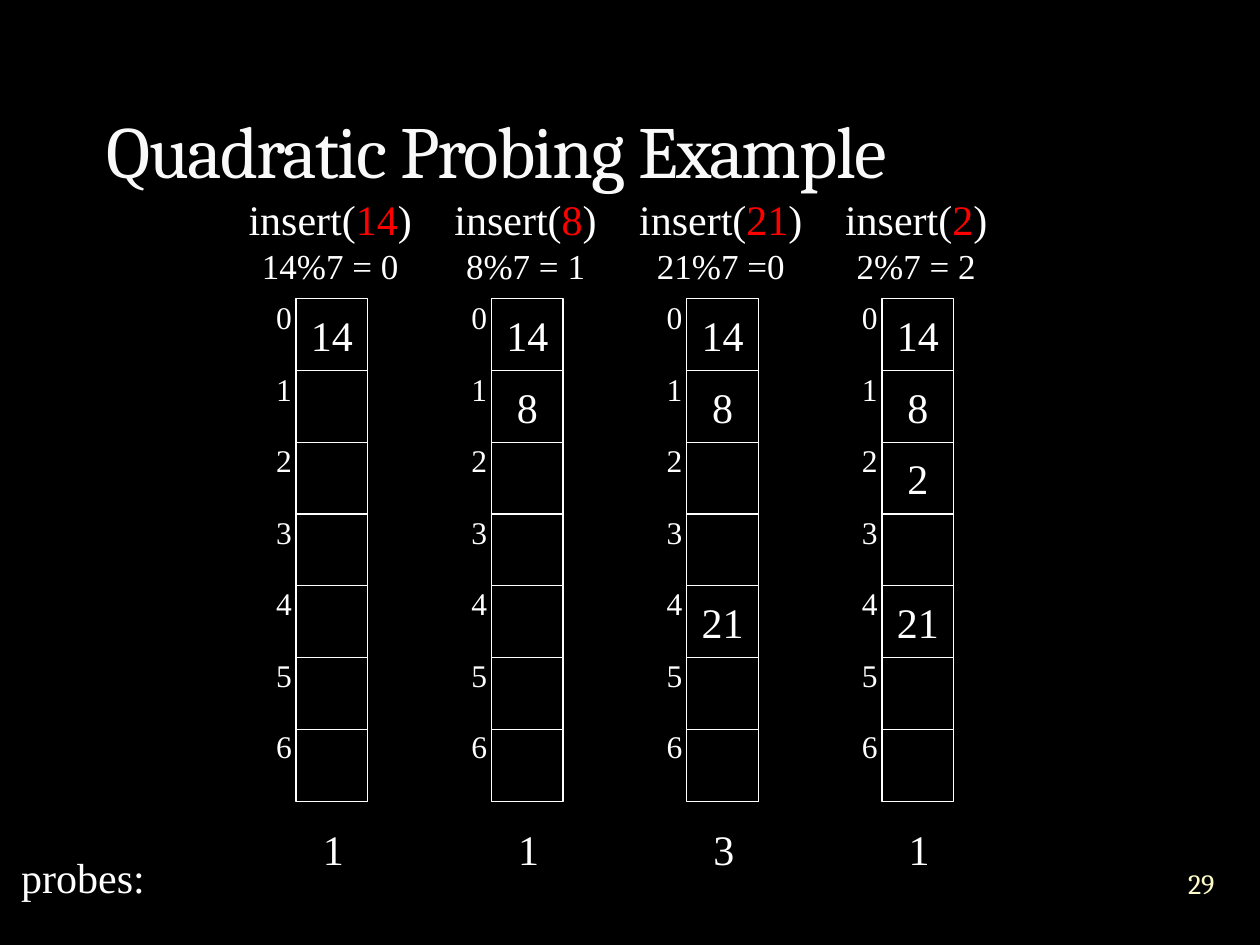
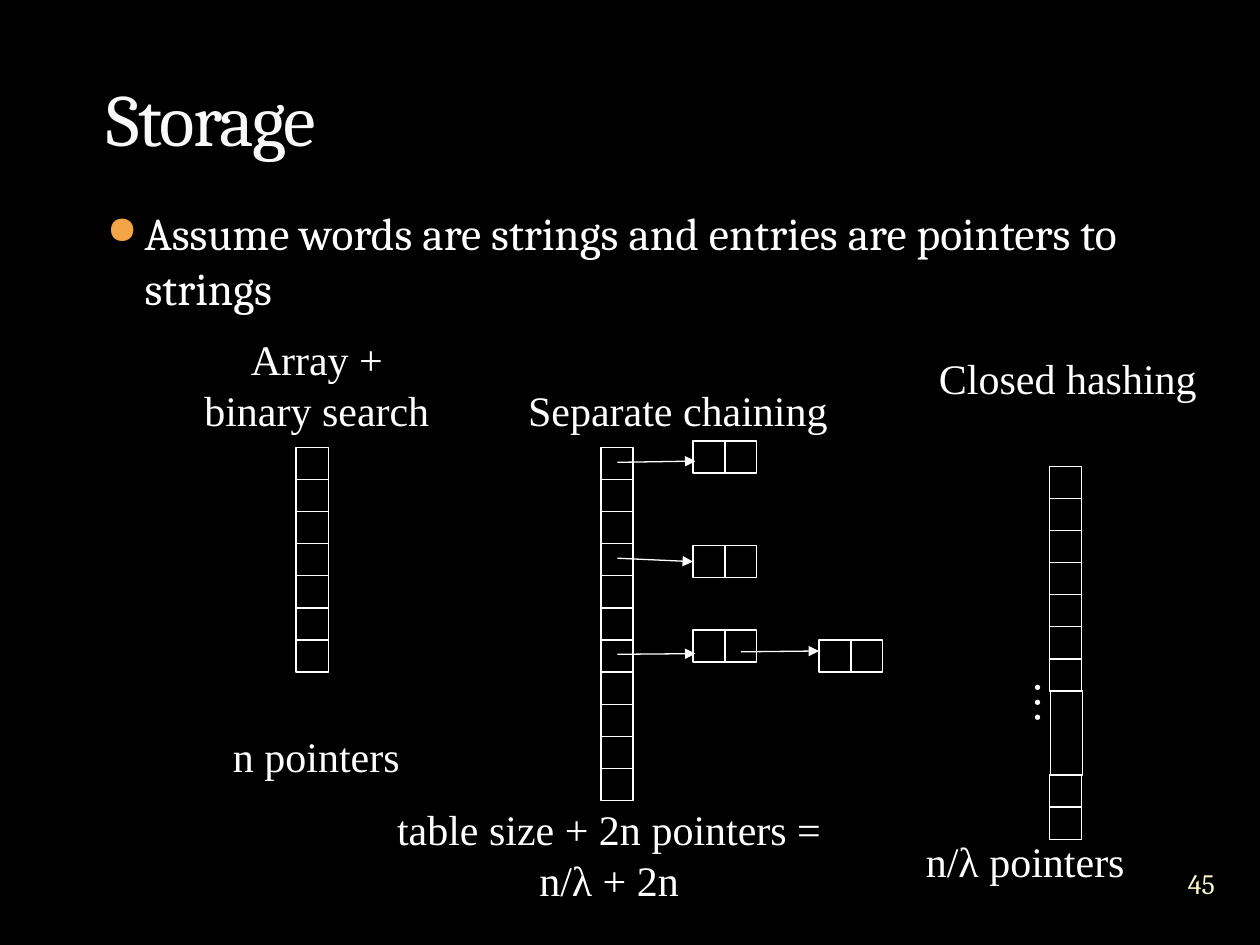
from lxml.etree import SubElement as sub
from pptx import Presentation
from pptx.dml.color import RGBColor
from pptx.enum.shapes import MSO_CONNECTOR as CONN, MSO_SHAPE as SHAPE
from pptx.enum.text import MSO_ANCHOR as ANCHOR, MSO_AUTO_SIZE as AUTO, PP_ALIGN as ALIGN
from pptx.oxml.ns import qn
from pptx.util import Pt

WHITE, BLACK, RED = "FFFFFF", "000000", "FF0000"
PALE, CREAM, AMBER, OLIVE = "F9F9F9", "FEFAC9", "F3A447", "3C4422"
SERIF, TIMES = "Cambria", "Times New Roman"
SLOT, CELL, NODE = 41.04, 18.36, 18


def tint(code):
    return RGBColor.from_string(code)


def write(para, text, size=24, color=WHITE, face=TIMES):
    run = para.add_run()
    run.text = text
    font = run.font
    font.size, font.name = Pt(size), face
    font.color.rgb = tint(color)
    return run


def add_box(shapes, left, top, width, height, wrap=False, anchor=ANCHOR.TOP, grow=False):
    frame = shapes.add_textbox(Pt(left), Pt(top), Pt(width), Pt(height)).text_frame
    frame.word_wrap = wrap
    frame.vertical_anchor = anchor
    frame.auto_size = AUTO.SHAPE_TO_FIT_TEXT if grow else AUTO.NONE
    return frame


def add_label(shapes, left, top, width, height, lines, size=24, align=ALIGN.LEFT, wrap=False):
    frame = add_box(shapes, left, top, width, height, wrap, grow=True)
    for i, line in enumerate(lines):
        para = frame.add_paragraph() if i else frame.paragraphs[0]
        para.alignment = align
        write(para, line, size)


def add_cell(shapes, left, top, width, height, text="", size=24):
    cell = shapes.add_shape(SHAPE.RECTANGLE, Pt(left), Pt(top), Pt(width), Pt(height))
    cell.shadow.inherit = False
    cell.fill.background()
    cell.line.color.rgb = tint(WHITE)
    cell.line.width = Pt(0.75)
    if text:
        frame = cell.text_frame
        frame.word_wrap = False
        frame.vertical_anchor = ANCHOR.MIDDLE
        para = frame.paragraphs[0]
        para.alignment = ALIGN.CENTER
        write(para, text, size)
    return cell


def add_stack(shapes, left, top, count, side=CELL, held={}):
    for i in range(count):
        add_cell(shapes, left, top + i * side, side, side, held.get(i, ""))


def add_node(shapes, left, top):
    return [add_cell(shapes, left + i * NODE, top, CELL, CELL) for i in range(2)][0]


def add_arrow(shapes, x1, y1, x2, y2, goal=None):
    arrow = shapes.add_connector(CONN.STRAIGHT, Pt(x1), Pt(y1), Pt(x2), Pt(y2))
    if goal is not None:
        arrow.end_connect(goal, 1)
    arrow.line.color.rgb = tint(WHITE)
    arrow.line.width = Pt(0.75)
    sub(arrow.line._get_or_add_ln(), qn("a:tailEnd"), type="triangle")
    sub(arrow._element.spPr, qn("a:effectLst"))


def add_title(shapes, top, text):
    frame = add_box(shapes, 54, top, 612, 90, True, ANCHOR.BOTTOM)
    props = write(frame.paragraphs[0], text, 42, PALE, SERIF)._r.get_or_add_rPr()
    props.set("spc", "-100")
    edge = props.makeelement(qn("a:ln"), {"w": "3175"})
    hue = sub(sub(edge, qn("a:solidFill")), qn("a:srgbClr"), val=OLIVE)
    sub(hue, qn("a:alpha"), val="25000")
    props.insert(0, edge)


def add_bullet(shapes, text):
    para = add_box(shapes, 54, 113.76, 612, 324, True).paragraphs[0]
    para.space_before = Pt(6)
    props = para._p.get_or_add_pPr()
    props.set("marL", str(Pt(21.6)))
    props.set("indent", str(Pt(-21.6)))
    sub(sub(props, qn("a:buClr")), qn("a:srgbClr"), val=AMBER)
    sub(props, qn("a:buSzPct"), val="85000")
    sub(props, qn("a:buChar"), char="●")
    write(para, text, 26, WHITE, SERIF)


def add_slide(deck, title, top, number):
    slide = deck.slides.add_slide(deck.slide_layouts[6])
    fill = slide.background.fill
    fill.solid()
    fill.fore_color.rgb = tint(BLACK)
    frame = add_box(slide.shapes, 662.4, 486.72, 48.24, 36, True, ANCHOR.MIDDLE)
    frame.margin_left = frame.margin_right = frame.margin_top = frame.margin_bottom = 0
    para = frame.paragraphs[0]
    para.alignment = ALIGN.CENTER
    write(para, number, 16, CREAM, SERIF)
    add_title(slide.shapes, top, title)
    return slide.shapes


def add_insert(shapes, left, key, sum_text, held, probes):
    width = 84 + 12 * len(key)
    frame = add_box(shapes, left + (SLOT - width) / 2 - 1, 107.3, width, 59.8, grow=True)
    head, note = frame.paragraphs[0], frame.add_paragraph()
    head.alignment = note.alignment = ALIGN.CENTER
    for text, color in (("insert(", WHITE), (key, RED), (")", WHITE)):
        write(head, text, 24, color)
    write(note, sum_text, 20)
    add_stack(shapes, left, 170.64, 7, SLOT, held)
    for i in range(7):
        add_label(shapes, left - 18.5, 167 + i * 40.86, 23.8, 28.8, [str(i)], 18)
    add_label(shapes, left + 8.2, 467.3, 26.6, 36, [probes])


def probe_slide(deck):
    shapes = add_slide(deck, "Quadratic Probing Example", 23.76, "29")
    add_label(shapes, 5, 483.1, 85, 36, ["probes:"])
    steps = [
        ("14", "14%7 = 0", 0, "1"),
        ("8", "8%7 = 1", 1, "1"),
        ("21", "21%7 =0", 4, "3"),
        ("2", "2%7 = 2", 2, "1"),
    ]
    held = {}
    for i, (key, sum_text, slot, probes) in enumerate(steps):
        held[slot] = key
        add_insert(shapes, 169.2 + i * 111.6, key, sum_text, held, probes)


def draw_array(shapes):
    group = shapes.add_group_shape().shapes
    add_stack(group, 169.2, 255.6, 7)
    add_label(group, 109.4, 187.2, 143.3, 64.8, ["Array +", "binary search"], align=ALIGN.CENTER)
    add_label(shapes, 126, 414, 113.8, 36, ["n pointers"], wrap=True)


def draw_chains(shapes):
    add_stack(shapes, 343.4, 255.6, 11)
    add_label(shapes, 294.5, 216, 185.8, 36, ["Separate chaining"], align=ALIGN.CENTER)
    nodes = [add_node(shapes, left, top)
             for left, top in ((396, 252), (396, 311.76), (396, 360), (468, 365.76))]
    add_arrow(shapes, 352.8, 264.2, 397.4, 263.5)
    add_arrow(shapes, 352.8, 319, 396, 321, nodes[1])
    add_arrow(shapes, 352.8, 373.9, 397.4, 373.5)
    add_arrow(shapes, 423.4, 372.5, 468, 372)
    frame = add_box(shapes, 198, 455.8, 300.2, 64.8, True, grow=True)
    para = frame.paragraphs[0]
    para.alignment = ALIGN.CENTER
    write(para, "table size + 2n pointers =")
    para.add_line_break()
    write(para, "n/λ + 2n")


def draw_closed(shapes):
    group = shapes.add_group_shape().shapes
    add_stack(group, 599.8, 266.4, 7)
    add_stack(group, 599.8, 442.9, 2)
    gap = add_cell(group, 600.4, 394.9, 18, 48, "…", 44)
    frame = gap.text_frame
    frame._txBody.bodyPr.set("vert", "eaVert")
    frame.paragraphs[0].runs[0]._r.get_or_add_rPr().set("baseline", "30000")
    add_label(group, 529.2, 198, 162, 36, ["Closed hashing"], align=ALIGN.CENTER)
    add_label(shapes, 522, 473.8, 131.8, 36, ["n/λ pointers"], wrap=True)


def store_slide(deck):
    shapes = add_slide(deck, "Storage", 5.76, "45")
    add_bullet(shapes, "Assume words are strings and entries are pointers to strings")
    draw_array(shapes)
    draw_chains(shapes)
    draw_closed(shapes)


def main():
    deck = Presentation()
    deck.slide_width, deck.slide_height = Pt(720), Pt(540)
    probe_slide(deck)
    store_slide(deck)
    deck.save("out.pptx")


if __name__ == "__main__":
    main()
